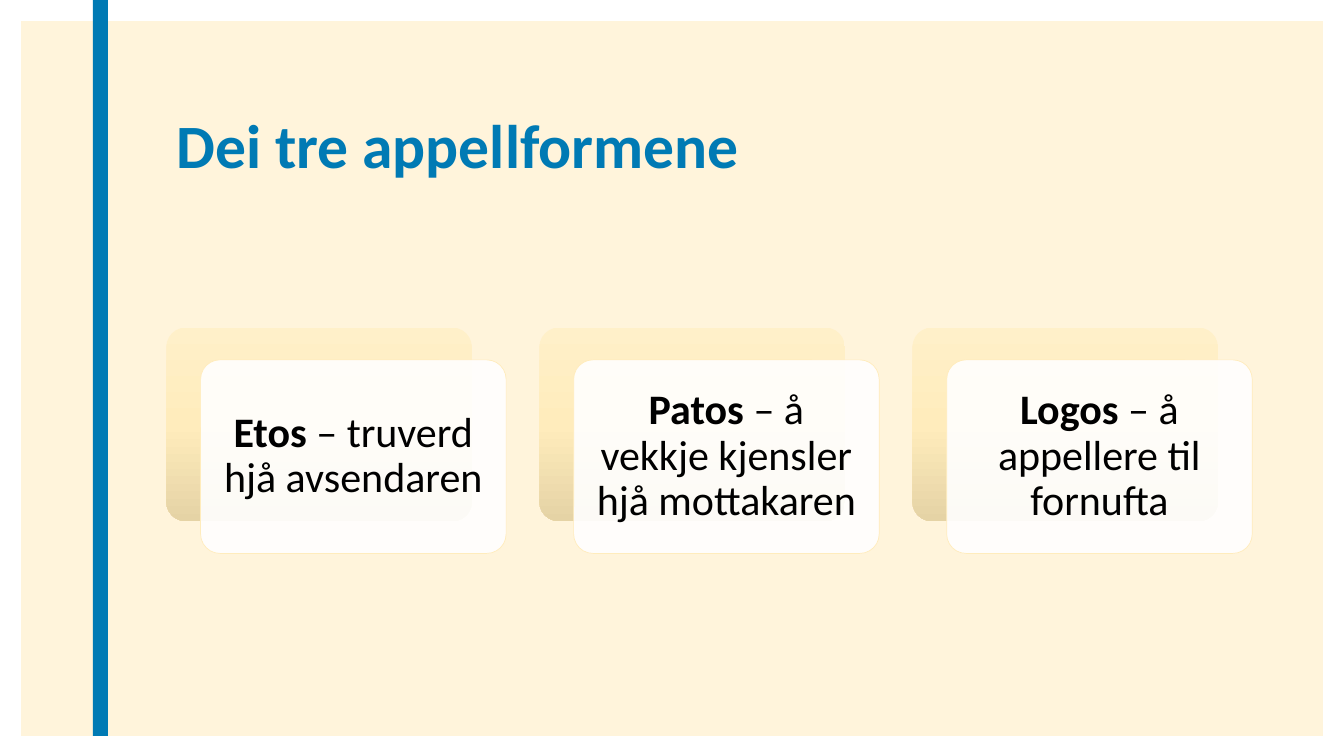
import copy
from dataclasses import dataclass

import pptx
import pptx.dml.color
import pptx.enum.shapes
import pptx.enum.text
import pptx.oxml
import pptx.oxml.ns
import pptx.util

Inches = pptx.util.Inches
Pt = pptx.util.Pt
RGB = pptx.dml.color.RGBColor.from_string
SHAPE = pptx.enum.shapes.MSO_SHAPE
ANCHOR = pptx.enum.text.MSO_ANCHOR
ALIGN = pptx.enum.text.PP_ALIGN
qn = pptx.oxml.ns.qn


@dataclass(frozen=True)
class Theme:
    font: str = "Calibri"
    title_size: int = 44
    card_size: int = 30
    accent: str = "007AB4"
    panel: str = "FFF4DB"
    card: str = "FFFFFF"
    card_line: str = "FFECBC"
    text: str = "000000"
    gradient: tuple = ((0, "FFF0C9"), (0.5, "FFECBC"), (1, "E5D3A5"))


THEME = Theme()
APPEALS = [
    ("Etos", " – truverd hjå avsendaren"),
    ("Patos", " – å vekkje kjensler hjå mottakaren"),
    ("Logos", " – å appellere til fornufta"),
]


def add_box(slide, kind, x, y, w, h, color=None):
    sp = slide.shapes.add_shape(kind, Inches(x), Inches(y), Inches(w), Inches(h))
    sp.shadow.inherit = False
    sp.line.fill.background()
    if color:
        sp.fill.solid()
        sp.fill.fore_color.rgb = RGB(color)
    if kind == SHAPE.ROUNDED_RECTANGLE:
        sp.adjustments[0] = 0.1
    return sp


def add_run(p, text, size, color, bold):
    r = p.add_run()
    r.text = text
    r.font.name = THEME.font
    r.font.size = Pt(size)
    r.font.bold = bold
    r.font.color.rgb = RGB(color)


def fill_gradient(sp, stops):
    """Fill a shape with a three-stop gradient running downwards."""
    sp.fill.gradient()
    sp.fill.gradient_angle = 270
    first = next(sp._element.spPr.iter(qn("a:gs")))
    first.addnext(copy.deepcopy(first))
    for stop, (position, color) in zip(sp.fill.gradient_stops, stops):
        stop.position = position
        stop.color.rgb = RGB(color)


def set_opacity(sp, percent):
    color = sp._element.spPr.find(qn("a:solidFill"))[0]
    alpha = pptx.oxml.parse_xml(
        f'<a:alpha {pptx.oxml.ns.nsdecls("a")} val="{percent * 1000}"/>')
    color.append(alpha)


def add_backdrop(slide, x, y, w, h):
    # Cream panel and the blue bar that starts at the slide's top edge
    add_box(slide, SHAPE.RECTANGLE, x, y, w, h, THEME.panel)
    add_box(slide, SHAPE.RECTANGLE, x + 0.71, 0, 0.15, y + h, THEME.accent)


def add_title(slide, text, x, y, w, h):
    tb = slide.shapes.add_textbox(Inches(x), Inches(y), Inches(w), Inches(h))
    tf = tb.text_frame
    tf.word_wrap = True
    tf.vertical_anchor = ANCHOR.BOTTOM
    p = tf.paragraphs[0]
    p.line_spacing = 0.9
    add_run(p, text, THEME.title_size, THEME.accent, True)


def add_card(slide, name, explanation, x, y, w, h):
    offset_x, offset_y = 0.34, 0.32
    card_w, card_h = w - offset_x, h - offset_y

    # Gradient plate behind
    plate = add_box(slide, SHAPE.ROUNDED_RECTANGLE, x, y, card_w, card_h)
    fill_gradient(plate, THEME.gradient)

    # White card in front, shifted down and right
    card = add_box(slide, SHAPE.ROUNDED_RECTANGLE, x + offset_x, y + offset_y,
                   card_w, card_h, THEME.card)
    set_opacity(card, 90)
    card.line.color.rgb = RGB(THEME.card_line)
    card.line.width = Pt(0.5)

    tf = card.text_frame
    tf.word_wrap = True
    tf.vertical_anchor = ANCHOR.MIDDLE
    tf.margin_left = tf.margin_right = Inches(0.12)
    tf.margin_top = tf.margin_bottom = Inches(0.12)
    p = tf.paragraphs[0]
    p.alignment = ALIGN.CENTER
    p.line_spacing = 0.9
    add_run(p, name, THEME.card_size, THEME.text, True)
    add_run(p, explanation, THEME.card_size, THEME.text, False)


def add_cards(slide, appeals, x, y, w, h):
    gap = 0.33
    card_w = (w - gap * (len(appeals) - 1)) / len(appeals)
    for i, (name, explanation) in enumerate(appeals):
        add_card(slide, name, explanation, x + i * (card_w + gap), y, card_w, h)


def main():
    prs = pptx.Presentation()
    prs.slide_width = Inches(13.33)
    prs.slide_height = Inches(7.5)
    slide = prs.slides.add_slide(prs.slide_layouts[6])
    add_backdrop(slide, 0.21, 0.21, 12.91, 7.09)
    add_title(slide, "Dei tre appellformene", 1.65, 0.4, 10.77, 1.45)
    add_cards(slide, APPEALS, 1.65, 3.25, 10.77, 2.24)
    prs.save("out.pptx")


if __name__ == "__main__":
    main()
